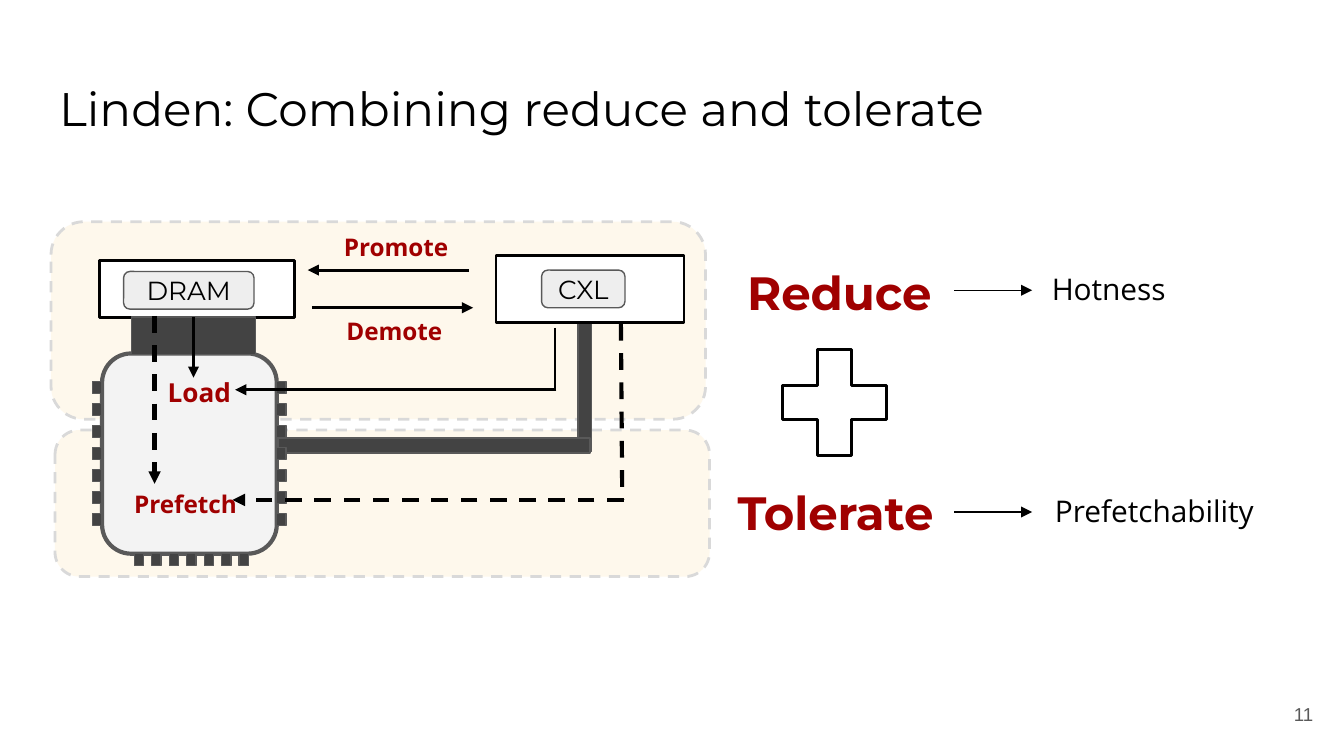
"""Build the slide on combining reduce and tolerate."""
from dataclasses import dataclass

from lxml.etree import SubElement
from pptx import Presentation
from pptx.dml.color import RGBColor as Rgb
from pptx.enum.dml import MSO_LINE as Dash
from pptx.enum.shapes import MSO_CONNECTOR as Conn, MSO_SHAPE as Kind
from pptx.enum.text import MSO_ANCHOR as Anchor, PP_ALIGN as Align
from pptx.oxml.ns import qn
from pptx.util import Inches, Pt

HUES = {
    "black": "000000", "white": "FFFFFF", "red": "A00000", "cream": "FEF8EC",
    "pale": "D9D9D9", "dark": "434343", "grey": "595959", "chip": "F3F3F3",
    "tag": "EEEEEE",
}


@dataclass
class Box:
    left: float
    top: float
    width: float
    height: float
    fill: str | None = "dark"
    edge: str = "grey"
    weight: float = 0.75
    kind: Kind = Kind.RECTANGLE
    dashed: bool = False
    text: str = ""


@dataclass
class Label:
    text: str
    left: float
    top: float
    width: float
    height: float
    size: float
    font: str = "Open Sans"
    hue: str = "red"
    bold: bool = True
    align: Align = Align.LEFT
    anchor: Anchor = Anchor.TOP


@dataclass
class Arrow:
    start: tuple[float, float]
    end: tuple[float, float]
    weight: float = 1.5
    dashed: bool = False
    head: bool = True


def tint(name: str) -> Rgb:
    return Rgb.from_string(HUES[name])


def write(frame, text: str, size: float, font: str, hue: str, bold: bool = False,
          align: Align = Align.LEFT, anchor: Anchor = Anchor.TOP) -> None:
    frame.word_wrap = True
    frame.vertical_anchor = anchor
    frame.margin_left = frame.margin_right = Inches(0.1)
    frame.margin_top = frame.margin_bottom = Inches(0.1)
    para = frame.paragraphs[0]
    para.alignment = align
    run = para.add_run()
    run.text = text
    run.font.size, run.font.name, run.font.bold = Pt(size), font, bold
    run.font.color.rgb = tint(hue)


def stroke(line, hue: str, weight: float, dashed: bool) -> None:
    line.color.rgb = tint(hue)
    line.width = Pt(weight)
    if dashed:
        line.dash_style = Dash.DASH


def draw_box(slide, box: Box):
    spot = map(Inches, (box.left, box.top, box.width, box.height))
    shape = slide.shapes.add_shape(box.kind, *spot)
    shape.shadow.inherit = False
    if box.fill:
        shape.fill.solid()
        shape.fill.fore_color.rgb = tint(box.fill)
    else:
        shape.fill.background()
    stroke(shape.line, box.edge, box.weight, box.dashed)
    if box.text:
        write(shape.text_frame, box.text, 14, "Montserrat", "black",
              align=Align.CENTER, anchor=Anchor.MIDDLE)
    return shape


def draw_label(slide, label: Label) -> None:
    spot = map(Inches, (label.left, label.top, label.width, label.height))
    frame = slide.shapes.add_textbox(*spot).text_frame
    write(frame, label.text, label.size, label.font, label.hue, label.bold,
          label.align, label.anchor)


def draw_arrow(slide, arrow: Arrow):
    ends = map(Inches, (*arrow.start, *arrow.end))
    link = slide.shapes.add_connector(Conn.STRAIGHT, *ends)
    stroke(link.line, "black", arrow.weight, arrow.dashed)
    if arrow.head:
        SubElement(link.line._get_or_add_ln(), qn("a:tailEnd"), type="triangle")
    SubElement(link._element.spPr, qn("a:effectLst"))
    return link


def panel(left: float, top: float, height: float) -> Box:
    return Box(left, top, 4.87, height, "cream", "pale", 1.5, Kind.ROUNDED_RECTANGLE, True)


def slot(left: float, top: float, width: float, height: float) -> Box:
    return Box(left, top, width, height, "white", "black", 1.5)


def tag(text: str, left: float, top: float, width: float) -> Box:
    return Box(left, top, width, 0.28, "tag", kind=Kind.ROUNDED_RECTANGLE, text=text)


BACK = [
    panel(0.41, 3.2, 1.09),
    panel(0.38, 1.65, 1.47),
    Box(4.3, 2.39, 0.1, 0.97),
    Box(2.06, 3.26, 2.33, 0.11),
    slot(3.69, 1.9, 1.4, 0.5),
    Box(0.76, 2.63, 1.3, 1.49, "chip", weight=2.25, kind=Kind.ROUNDED_RECTANGLE),
]
PINS = [Box(1 + 0.13 * i, 4.12, 0.07, 0.09) for i in range(7)]
PINS += [Box(x, 2.84 + 0.98 * i / 6, 0.07, 0.09) for x in (2.06, 0.69) for i in range(7)]
FRONT = [
    slot(0.74, 1.94, 1.45, 0.42),
    tag("DRAM", 0.92, 2.02, 0.97),
    tag("CXL", 4.03, 2.01, 0.62),
    Box(5.68, 2.46, 1.06, 1.07, None, "black", 1.5, Kind.MATH_PLUS),
]
ARROWS = [
    Arrow((3.49, 2.01), (2.29, 2.01)),
    Arrow((2.32, 2.29), (3.52, 2.29)),
    Arrow((4.14, 2.9), (1.75, 2.9)),
    Arrow((4.13, 2.44), (4.13, 2.91), head=False),
    Arrow((4.64, 3.72), (1.73, 3.72), 2.25, True),
    Arrow((4.62, 2.41), (4.63, 3.72), 2.25, True, False),
    Arrow((1.15, 2.35), (1.15, 3.6), 2.25, True),
    Arrow((7.1, 2.16), (7.68, 2.16), 0.75),
    Arrow((7.1, 3.81), (7.68, 3.81), 0.75),
]
LABELS = [
    Label("Promote", 2.46, 1.63, 1.02, 0.42, 13),
    Label("Demote", 2.48, 2.25, 1.03, 0.42, 13),
    Label("Load", 1.15, 2.7, 0.84, 0.44, 14),
    Label("Prefetch", 0.9, 3.54, 1.02, 0.42, 13),
    Label("Reduce", 5.46, 1.86, 2.02, 0.6, 25, "Montserrat"),
    Label("Tolerate", 5.39, 3.5, 1.9, 0.6, 25, "Montserrat"),
    Label("Hotness", 7.58, 1.94, 1.34, 0.42, 16, "Open Sans", "black", False,
          Align.CENTER, Anchor.MIDDLE),
    Label("Prefetchability", 7.66, 3.59, 1.86, 0.42, 16, "Open Sans", "black", False,
          Align.CENTER, Anchor.MIDDLE),
    Label("11", 9.27, 5.1, 0.6, 0.43, 10, "Arial", "grey", False,
          Align.RIGHT, Anchor.MIDDLE),
]


def main() -> None:
    deck = Presentation()
    deck.slide_width, deck.slide_height = Inches(10), Inches(10 * 9 / 16)
    slide = deck.slides.add_slide(deck.slide_layouts[5])
    title = slide.shapes.title
    title.left, title.top = Inches(0.34), Inches(0.49)
    title.width, title.height = Inches(9.32), Inches(0.63)
    write(title.text_frame, "Linden: Combining reduce and tolerate", 25.2,
          "Montserrat", "black")
    for box in BACK + PINS + FRONT:
        draw_box(slide, box)
    bus = draw_box(slide, Box(0.98, 2.36, 0.92, 0.28))
    load = draw_arrow(slide, Arrow((1.44, 2.36), (1.44, 2.81)))
    load.begin_connect(bus, 0)
    for arrow in ARROWS:
        draw_arrow(slide, arrow)
    for label in LABELS:
        draw_label(slide, label)
    deck.save("out.pptx")


if __name__ == "__main__":
    main()
